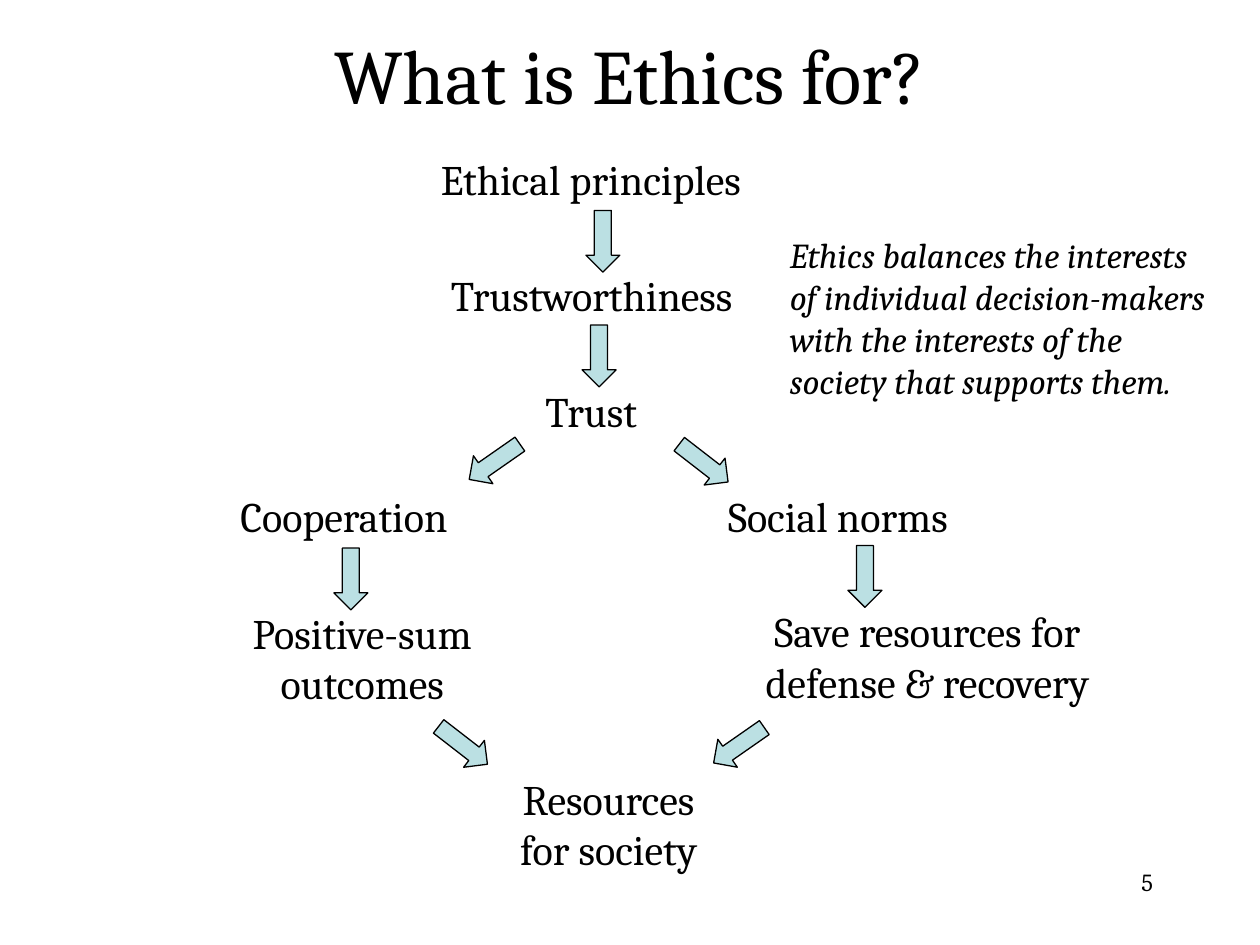
from pptx import Presentation
from pptx.dml.color import RGBColor
from pptx.enum import shapes, text
from pptx.util import Inches, Pt

COLOURS = {"ink": "000000", "arrow": "BBE0E3"}
LEFT, CENTER, RIGHT = text.PP_ALIGN.LEFT, text.PP_ALIGN.CENTER, text.PP_ALIGN.RIGHT
GROW = text.MSO_AUTO_SIZE.SHAPE_TO_FIT_TEXT

deck = Presentation()
deck.slide_width, deck.slide_height = Inches(10), Inches(7.5)
page = deck.slides.add_slide(deck.slide_layouts[6])


def add_text(lines, place, size, align=LEFT, italic=False, **frame_format):
    """Add a text box with one paragraph per line; frame_format sets text frame attributes."""
    box = page.shapes.add_textbox(*map(Inches, place))
    frame = box.text_frame
    for name, value in {"word_wrap": True, **frame_format}.items():
        setattr(frame, name, value)
    for index, line in enumerate(lines):
        para = frame.add_paragraph() if index else frame.paragraphs[0]
        para.alignment = align
        span = para.add_run()
        span.text = line
        font_format = {"name": "Cambria", "size": Pt(size), "italic": italic}
        for name, value in font_format.items():
            setattr(span.font, name, value)
        span.font.color.rgb = RGBColor.from_string(COLOURS["ink"])


add_text(["What is Ethics for?"], (0.75, 0.25, 8.5, 0.67), 44, CENTER,
         vertical_anchor=text.MSO_ANCHOR.MIDDLE)
add_text(["5"], (7.17, 6.83, 2.08, 0.5), 14, RIGHT)

# Steps of the flow: lines, left, top, width
steps = [
    (["Ethical principles"], 3.4, 1.17, 2.73),
    (["Trustworthiness"], 3.48, 2.09, 2.57),
    (["Trust"], 4.23, 3.01, 0.96),
    (["Cooperation"], 1.81, 3.84, 2.04),
    (["Social norms"], 5.68, 3.84, 2.15),
    (["Positive-sum", "outcomes"], 1.81, 4.77, 2.13),
    (["Save resources for", "defense & recovery"], 5.81, 4.76, 3.1),
    (["Resources", "for society"], 4, 6.09, 1.66),
]
for lines, left, top, width in steps:
    several = len(lines) > 1
    add_text(lines, (left, top, width, 0.91 if several else 0.5), 24,
             CENTER if several else LEFT, word_wrap=False, auto_size=GROW)

# Arrows between the steps, grouped by rotation: left, top
arrows = {
    0: [(4.65, 1.67), (4.62, 2.58), (2.65, 4.35), (6.73, 4.33)],
    55.1: [(3.79, 3.42), (5.73, 5.67)],
    307.8: [(5.45, 3.43), (3.54, 5.67)],
}
for rotation, places in arrows.items():
    for left, top in places:
        arrow = page.shapes.add_shape(shapes.MSO_SHAPE.DOWN_ARROW, Inches(left),
                                      Inches(top), Inches(0.27), Inches(0.49))
        arrow.rotation = rotation
        arrow.shadow.inherit = False
        arrow.fill.solid()
        arrow.fill.fore_color.rgb = RGBColor.from_string(COLOURS["arrow"])
        arrow.line.color.rgb = RGBColor.from_string(COLOURS["ink"])
        arrow.line.width = Pt(0.75)

add_text(["Ethics balances the interests of individual decision-makers "
          "with the interests of the society that supports them."],
         (6.17, 1.8, 3.58, 1.45), 20, italic=True, auto_size=GROW)

deck.save("out.pptx")
